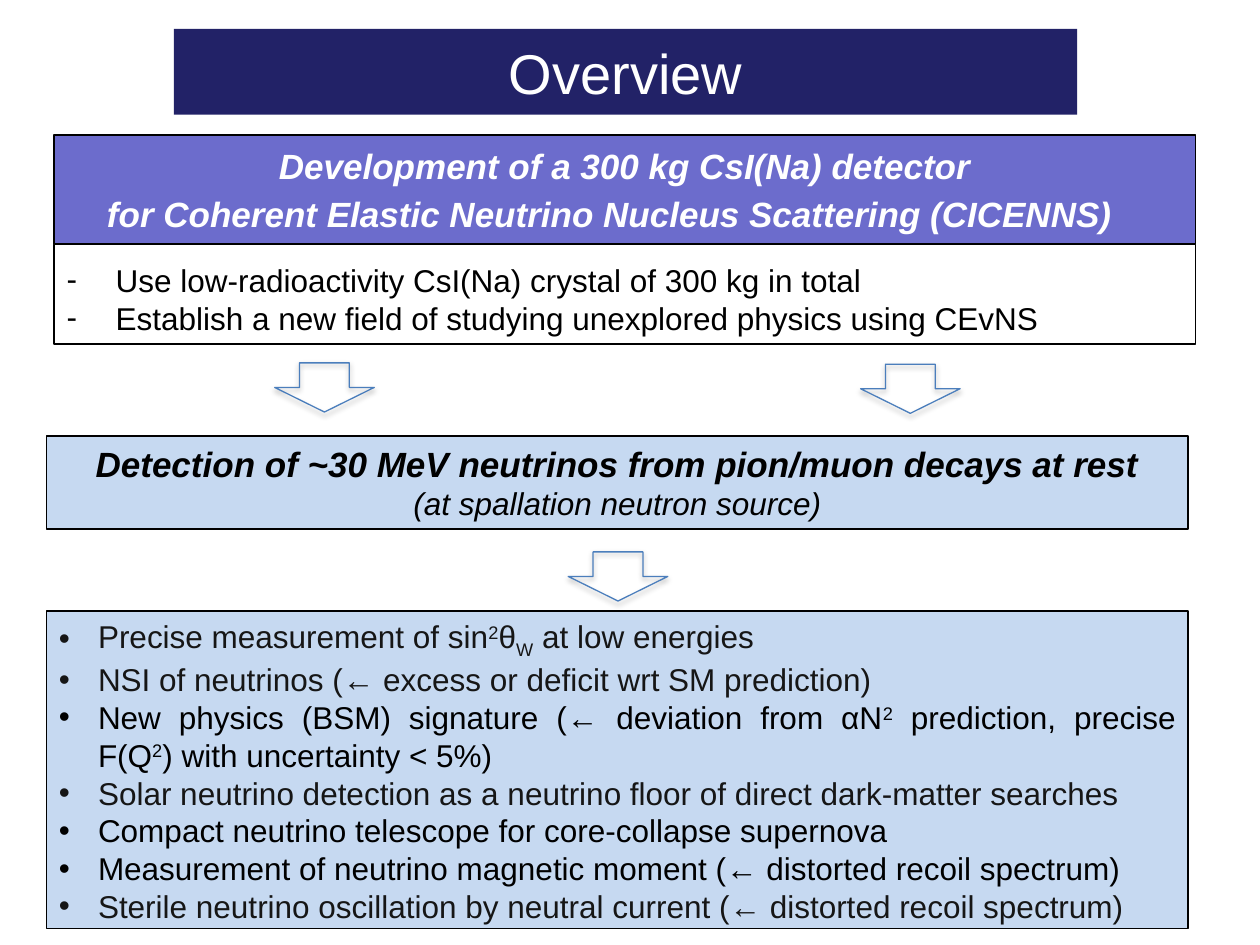
from lxml.etree import SubElement
from pptx import Presentation
from pptx.dml.color import RGBColor
from pptx.enum.shapes import MSO_SHAPE
from pptx.enum.text import MSO_ANCHOR, PP_ALIGN
from pptx.oxml.ns import qn
from pptx.util import Inches, Pt

BLACK, WHITE, GREY = "000000", "FFFFFF", "161616"
NAVY, PURPLE, PALE, BLUE = "222267", "6C6CCC", "C6D9F1", "4B7EBC"
SUP, SUB = 30, -25


def rgb(value):
    """Turn a hex string into a colour."""
    return RGBColor.from_string(value)


def add_box(s, box, fill=None, line=None, width=1.0, kind=MSO_SHAPE.RECTANGLE,
            anchor=MSO_ANCHOR.TOP):
    """Add a preset shape in a (left, top, width, height) box in inches."""
    sp = s.shapes.add_shape(kind, *map(Inches, box))
    sp.shadow.inherit = False
    if fill:
        sp.fill.solid()
        sp.fill.fore_color.rgb = rgb(fill)
    else:
        sp.fill.background()
    if line:
        sp.line.color.rgb = rgb(line)
        sp.line.width = Pt(width)
    else:
        sp.line.fill.background()
    sp.text_frame.word_wrap = True
    sp.text_frame.vertical_anchor = anchor
    return sp


def add_text(tf, text, size=18, color=BLACK, bold=False, italic=False,
             align=PP_ALIGN.CENTER, bullet=None, indent=0, before=0):
    """Add a paragraph from a string or a list of (text, baseline) runs."""
    p = tf.paragraphs[0]
    if p.runs:
        p = tf.add_paragraph()
    p.alignment = align
    pPr = p._p.get_or_add_pPr()
    if indent:
        pPr.set("marL", str(Inches(indent)))
    if bullet:
        pPr.set("indent", str(Inches(-indent)))
        SubElement(pPr, qn("a:buFont"), typeface="Arial")
        SubElement(pPr, qn("a:buChar"), char=bullet)
    if before:
        p.space_before = Pt(before)
    for part, base in [(text, 0)] if isinstance(text, str) else text:
        r = p.add_run()
        r.text = part
        r.font.name = "Arial"
        r.font.size = Pt(size)
        r.font.bold, r.font.italic = bold, italic
        r.font.color.rgb = rgb(color)
        if base:
            r._r.get_or_add_rPr().set("baseline", str(base * 1000))


def add_title(s, box):
    """Add the title banner."""
    sp = add_box(s, box, NAVY, anchor=MSO_ANCHOR.MIDDLE)
    add_text(sp.text_frame, "Overview", size=32, color=WHITE)


def add_project(s, box, head=0.87):
    """Add the project heading with its list of aims below."""
    left, top, width, height = box
    shift = 0.24
    tf = add_box(s, (left, top, width, head), PURPLE, BLACK,
                 anchor=MSO_ANCHOR.MIDDLE).text_frame
    tf.margin_right = Inches(0.1 + shift)
    style = dict(size=20, color=WHITE, bold=True, italic=True)
    add_text(tf, "Development of a 300 kg CsI(Na) detector", indent=shift, **style)
    add_text(tf, "for Coherent Elastic Neutrino Nucleus Scattering (CICENNS)",
             before=3.5, **style)
    tf = add_box(s, (left, top + head, width, height - head), WHITE, BLACK).text_frame
    tf.margin_top = Inches(0.13)
    for text in ("Use low-radioactivity CsI(Na) crystal of 300 kg in total",
                 "Establish a new field of studying unexplored physics using CEvNS"):
        add_text(tf, text, align=PP_ALIGN.LEFT, bullet="-", indent=0.39)


def add_arrow(s, left, top):
    """Add an outlined down arrow with a soft shadow."""
    sp = add_box(s, (left, top, 0.79, 0.39), line=BLUE, width=0.75,
                 kind=MSO_SHAPE.DOWN_ARROW)
    effects = sp._element.spPr.find(qn("a:effectLst"))
    shadow = SubElement(effects, qn("a:outerShdw"), blurRad=str(Pt(3.1)),
                        dist=str(Pt(1.8)), dir="5400000", rotWithShape="0")
    color = SubElement(shadow, qn("a:srgbClr"), val=BLACK)
    SubElement(color, qn("a:alpha"), val="35000")


def add_detection(s, box):
    """Add the detection panel."""
    tf = add_box(s, box, PALE, BLACK).text_frame
    add_text(tf, "Detection of ~30 MeV neutrinos from pion/muon decays at rest",
             size=20, bold=True, italic=True)
    add_text(tf, "(at spallation neutron source)", italic=True)


def add_goals(s, box):
    """Add the panel of physics goals."""
    goals = [
        ([("Precise measurement of sin", 0), ("2", SUP), ("θ", 0), ("W", SUB),
          (" at low energies", 0)], GREY),
        ("NSI of neutrinos (← excess or deficit wrt SM prediction)", GREY),
        ([("New physics (BSM) signature (← deviation from αN", 0), ("2", SUP),
          (" prediction, precise F(Q", 0), ("2", SUP),
          (") with uncertainty < 5%)", 0)], BLACK),
        ("Solar neutrino detection as a neutrino floor of direct dark-matter searches",
         GREY),
        ("Compact neutrino telescope for core-collapse supernova", BLACK),
        ("Measurement of neutrino magnetic moment (← distorted recoil spectrum)", BLACK),
        ("Sterile neutrino oscillation by neutral current (← distorted recoil spectrum)",
         GREY),
    ]
    tf = add_box(s, box, PALE, BLACK).text_frame
    for text, color in goals:
        add_text(tf, text, color=color, align=PP_ALIGN.JUSTIFY, bullet="•", indent=0.31)


def main():
    """Build the overview slide."""
    prs = Presentation()
    prs.slide_width, prs.slide_height = Inches(10), Inches(7.5)
    s = prs.slides.add_slide(prs.slide_layouts[6])
    add_title(s, (1.38, 0.23, 7.17, 0.68))
    add_project(s, (0.43, 1.07, 9.06, 1.66))
    for left, top in ((2.18, 2.88), (6.83, 2.89), (4.51, 4.38)):
        add_arrow(s, left, top)
    add_detection(s, (0.37, 3.46, 9.06, 0.74))
    add_goals(s, (0.37, 4.85, 9.06, 2.52))
    prs.save("out.pptx")


if __name__ == "__main__":
    main()
